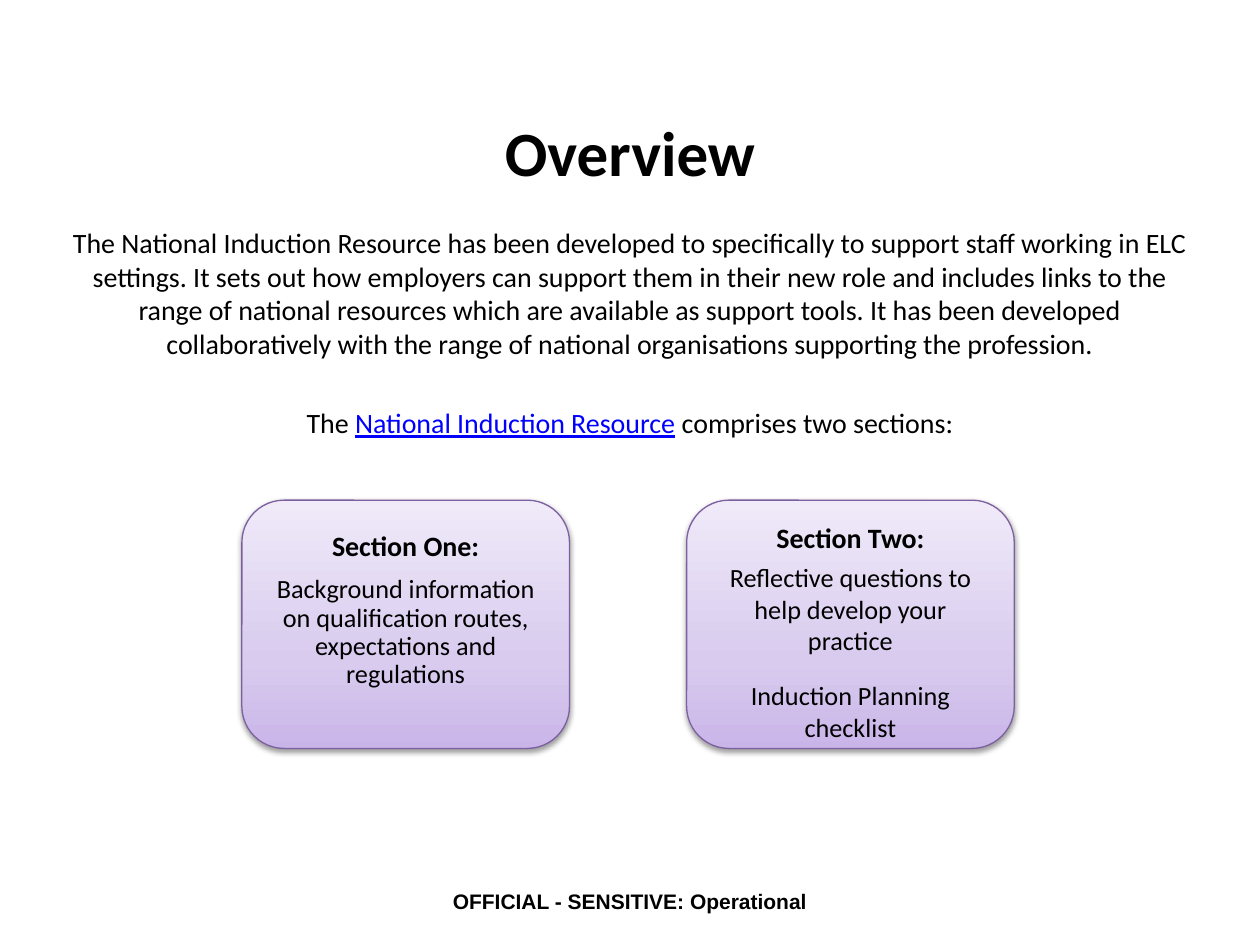
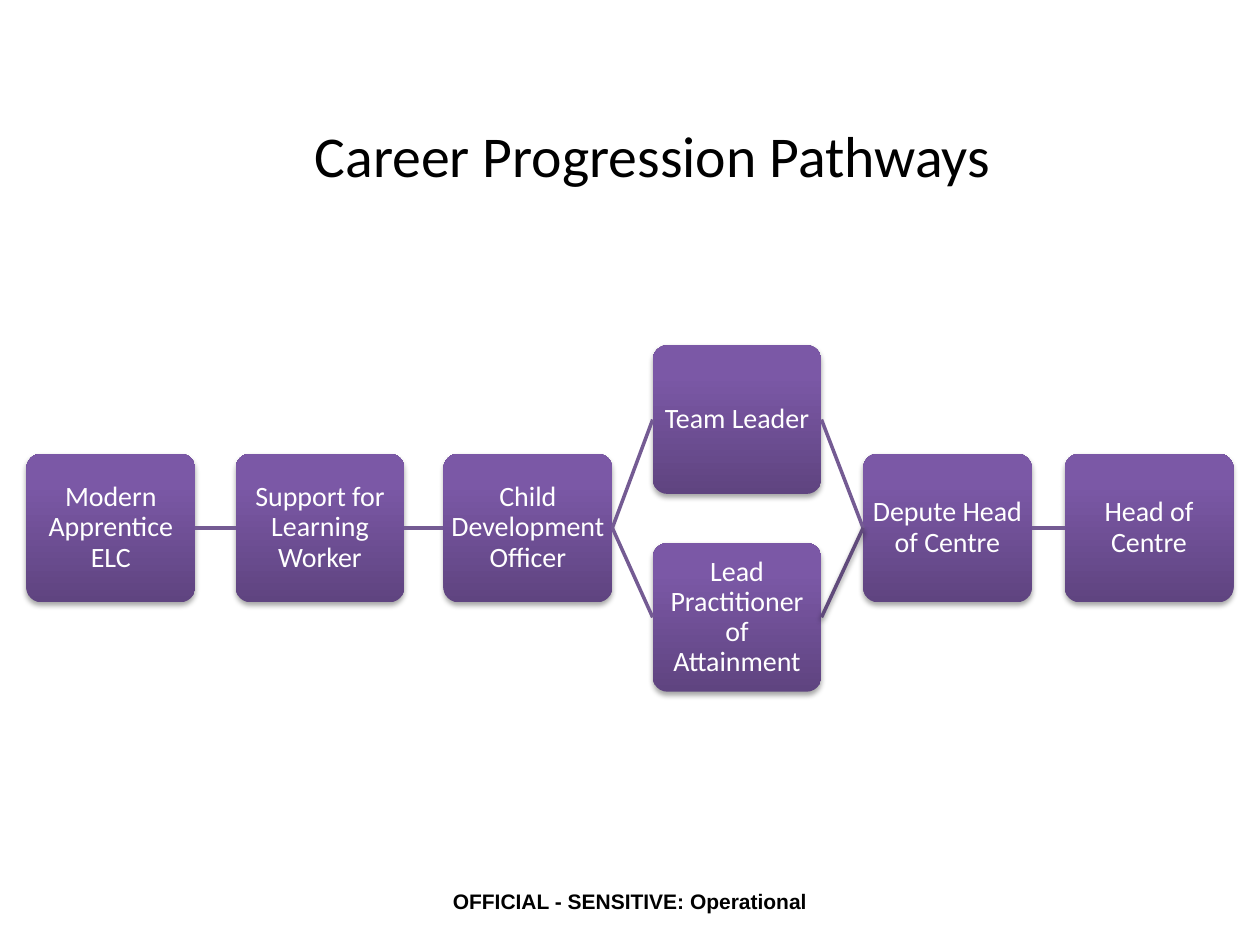
"""Build the induction overview and career pathway slides."""

from typing import NamedTuple

import lxml.etree
import pptx
import pptx.dml.color
import pptx.enum.shapes
import pptx.enum.text
import pptx.oxml.ns
import pptx.slide
import pptx.text.text
import pptx.util

Inches = pptx.util.Inches
Pt = pptx.util.Pt
Anchor = pptx.enum.text.MSO_ANCHOR
qn = pptx.oxml.ns.qn

BLACK, WHITE, LINK_BLUE = "000000", "FFFFFF", "0000FF"
CARD_OUTLINE = "7D60A0"
CARD_STOPS = ((0, "C9B5E8"), (35, "D8CBEE"), (100, "F0EAF9"))
NODE_STOPS = ((0, "5F4480"), (80, "7B58A6"), (100, "7C57A8"))
PATHWAY_LINE, MANUAL_LINE = "745B93", "604A7B"
BODY_FONT, FOOTER_FONT = "Calibri", "Arial"
NODE_WIDTH, NODE_HEIGHT = 1.34, 1.18


class Box(NamedTuple):
    left: float
    top: float
    width: float
    height: float


class Line(NamedTuple):
    text: str
    size: float = 16
    bold: bool = False
    color: str = BLACK
    font: str = BODY_FONT
    before: float = 0
    spacing: float = 1.0


class Shadow(NamedTuple):
    opacity: int
    blur: float
    distance: float


class Card(NamedTuple):
    left: float
    top_inset: float
    lines: tuple[Line, ...]


class Node(NamedTuple):
    label: str
    left: float
    top: float = 3.6


class Link(NamedTuple):
    start: str
    end: str
    color: str = PATHWAY_LINE
    shadow: Shadow | None = None


CARD_SHADOW = Shadow(38, 3.1, 1.6)
NODE_SHADOW = Shadow(35, 3.1, 1.8)

INTRODUCTION = (
    "The National Induction Resource has been developed to specifically to support "
    "staff working in ELC settings. It sets out how employers can support them in "
    "their new role and includes links to the range of national resources which are "
    "available as support tools. It has been developed collaboratively with the range "
    "of national organisations supporting the profession."
)
RESOURCE_NAME = "National Induction Resource"

CARDS = (
    Card(1.92, 0.16, (
        Line("Section One:", bold=True, spacing=0.9),
        Line("Background information on qualification routes, expectations and regulations",
             15, before=7.5, spacing=0.9),
    )),
    Card(5.45, 0.06, (
        Line("Section Two:", bold=True),
        Line("Reflective questions to help develop your practice", 15, before=4.5),
        Line("Induction Planning checklist", 15, before=13.4),
    )),
)

APPRENTICE = "Modern Apprentice ELC"
SUPPORT = "Support for Learning Worker"
OFFICER = "Child Development Officer"
TEAM_LEADER = "Team Leader"
LEAD = "Lead Practitioner of Attainment"
DEPUTE = "Depute Head of Centre"
HEAD = "Head of Centre"

NODES = (
    Node(APPRENTICE, 0.21),
    Node(SUPPORT, 1.87),
    Node(OFFICER, 3.52),
    Node(TEAM_LEADER, 5.18, 2.74),
    Node(LEAD, 5.18, 4.31),
    Node(DEPUTE, 6.85),
    Node(HEAD, 8.45),
)
LINKS = (
    Link(APPRENTICE, SUPPORT),
    Link(SUPPORT, OFFICER),
    Link(OFFICER, TEAM_LEADER),
    Link(OFFICER, LEAD),
    Link(TEAM_LEADER, DEPUTE),
    Link(DEPUTE, HEAD),
    Link(LEAD, DEPUTE, MANUAL_LINE, CARD_SHADOW),
)


def rgb(color: str) -> pptx.dml.color.RGBColor:
    """Turn a hex string into a colour."""
    return pptx.dml.color.RGBColor.from_string(color)


def format_run(run, line: Line) -> None:
    """Apply the font settings of a line to one run."""
    run.font.name = line.font
    run.font.size = Pt(line.size)
    run.font.bold = line.bold
    run.font.color.rgb = rgb(line.color)


def write(
    text_frame: pptx.text.text.TextFrame,
    lines: tuple[Line, ...],
    anchor: Anchor,
    side_inset: float = 0.1,
    top_inset: float = 0.05,
) -> None:
    """Fill a text frame with centred, wrapped lines."""
    text_frame.word_wrap = True
    text_frame.vertical_anchor = anchor
    text_frame.margin_left = text_frame.margin_right = Inches(side_inset)
    text_frame.margin_top = Inches(top_inset)
    text_frame.margin_bottom = Inches(0.05)
    text_frame.text = "\n".join(line.text for line in lines)
    for paragraph, line in zip(text_frame.paragraphs, lines):
        paragraph.alignment = pptx.enum.text.PP_ALIGN.CENTER
        paragraph.line_spacing = line.spacing
        if line.before:
            paragraph.space_before = Pt(line.before)
        for run in paragraph.runs:
            format_run(run, line)


def add_text(slide: pptx.slide.Slide, box: Box, lines: tuple[Line, ...],
             anchor: Anchor, **insets: float) -> pptx.text.text.TextFrame:
    """Add a text box and return its text frame."""
    shape = slide.shapes.add_textbox(*map(Inches, box))
    write(shape.text_frame, lines, anchor, **insets)
    return shape.text_frame


def set_shadow(shape, shadow: Shadow | None) -> None:
    """Replace the theme shadow with the given one or with none."""
    properties = shape._element.spPr
    effects = lxml.etree.SubElement(properties, qn("a:effectLst"))
    if shadow is None:
        return
    outer = lxml.etree.SubElement(
        effects, qn("a:outerShdw"), blurRad=str(int(Pt(shadow.blur))),
        dist=str(int(Pt(shadow.distance))), dir="5400000", rotWithShape="0")
    color = lxml.etree.SubElement(outer, qn("a:srgbClr"), val=BLACK)
    lxml.etree.SubElement(color, qn("a:alpha"), val=str(shadow.opacity * 1000))


def add_rounded(slide: pptx.slide.Slide, box: Box, radius: float,
                stops: tuple[tuple[int, str], ...], outline: str | None, shadow: Shadow):
    """Add a rounded rectangle with an upward gradient."""
    shape = slide.shapes.add_shape(
        pptx.enum.shapes.MSO_SHAPE.ROUNDED_RECTANGLE, *map(Inches, box))
    shape.adjustments[0] = radius
    shape.fill.gradient()
    shape.fill.gradient_angle = 90
    stop_list = shape._element.spPr.find(qn("a:gradFill")).find(qn("a:gsLst"))
    for stop in list(stop_list):
        stop_list.remove(stop)
    for position, color in stops:
        stop = lxml.etree.SubElement(stop_list, qn("a:gs"), pos=str(position * 1000))
        lxml.etree.SubElement(stop, qn("a:srgbClr"), val=color)
    if outline:
        shape.line.color.rgb = rgb(outline)
        shape.line.width = Pt(0.75)
    else:
        shape.line.fill.background()
    set_shadow(shape, shadow)
    return shape


def add_link(slide: pptx.slide.Slide, link: Link, shapes: dict) -> None:
    """Join the right side of one node to the left side of the next."""
    connector = slide.shapes.add_connector(
        pptx.enum.shapes.MSO_CONNECTOR.STRAIGHT, 0, 0, 0, 0)
    connector.begin_connect(shapes[link.start], 3)
    connector.end_connect(shapes[link.end], 1)
    connector.line.color.rgb = rgb(link.color)
    connector.line.width = Pt(2)
    set_shadow(connector, link.shadow)


def add_slide(presentation, title: Line, title_box: Box, anchor: Anchor) -> pptx.slide.Slide:
    """Add a blank slide with its title and the shared footer."""
    slide = presentation.slides.add_slide(presentation.slide_layouts[6])
    add_text(slide, title_box, (title,), anchor)
    footer = Line("OFFICIAL - SENSITIVE: Operational", 12, True, font=FOOTER_FONT)
    add_text(slide, Box(0, 6.95, 10, 0.4), (footer,), Anchor.MIDDLE)
    return slide


def build_overview(presentation) -> None:
    """Build the overview slide with its two section cards."""
    slide = add_slide(presentation, Line("Overview", 36, True),
                      Box(0.5, 0.3, 9, 1.25), Anchor.BOTTOM)
    sections = Line("The ", before=26)
    text_frame = add_text(slide, Box(0.5, 1.75, 9, 4.39), (Line(INTRODUCTION), sections),
                          Anchor.TOP, side_inset=0.07, top_inset=0.04)
    paragraph = text_frame.paragraphs[1]
    for text, color in ((RESOURCE_NAME, LINK_BLUE), (" comprises two sections:", BLACK)):
        run = paragraph.add_run()
        run.text = text
        format_run(run, sections._replace(color=color))
        run.font.underline = color == LINK_BLUE
    for card in CARDS:
        shape = add_rounded(slide, Box(card.left, 3.97, 2.6, 1.97), 0.17,
                            CARD_STOPS, CARD_OUTLINE, CARD_SHADOW)
        write(shape.text_frame, card.lines, Anchor.TOP, top_inset=card.top_inset)


def build_pathways(presentation) -> None:
    """Build the career pathway diagram."""
    slide = add_slide(presentation, Line("Career Progression Pathways", 33),
                      Box(0.68, 0.9, 9, 1.25), Anchor.TOP)
    shapes = {}
    for node in NODES:
        shape = add_rounded(slide, Box(node.left, node.top, NODE_WIDTH, NODE_HEIGHT), 0.1,
                            NODE_STOPS, None, NODE_SHADOW)
        write(shape.text_frame, (Line(node.label, color=WHITE, spacing=0.9),),
              Anchor.MIDDLE, side_inset=0.02)
        shapes[node.label] = shape
    for link in LINKS:
        add_link(slide, link, shapes)


def main() -> None:
    """Create and save the presentation."""
    presentation = pptx.Presentation()
    presentation.slide_width = Inches(10)
    presentation.slide_height = Inches(7.5)
    build_overview(presentation)
    build_pathways(presentation)
    presentation.save("out.pptx")


if __name__ == "__main__":
    main()
